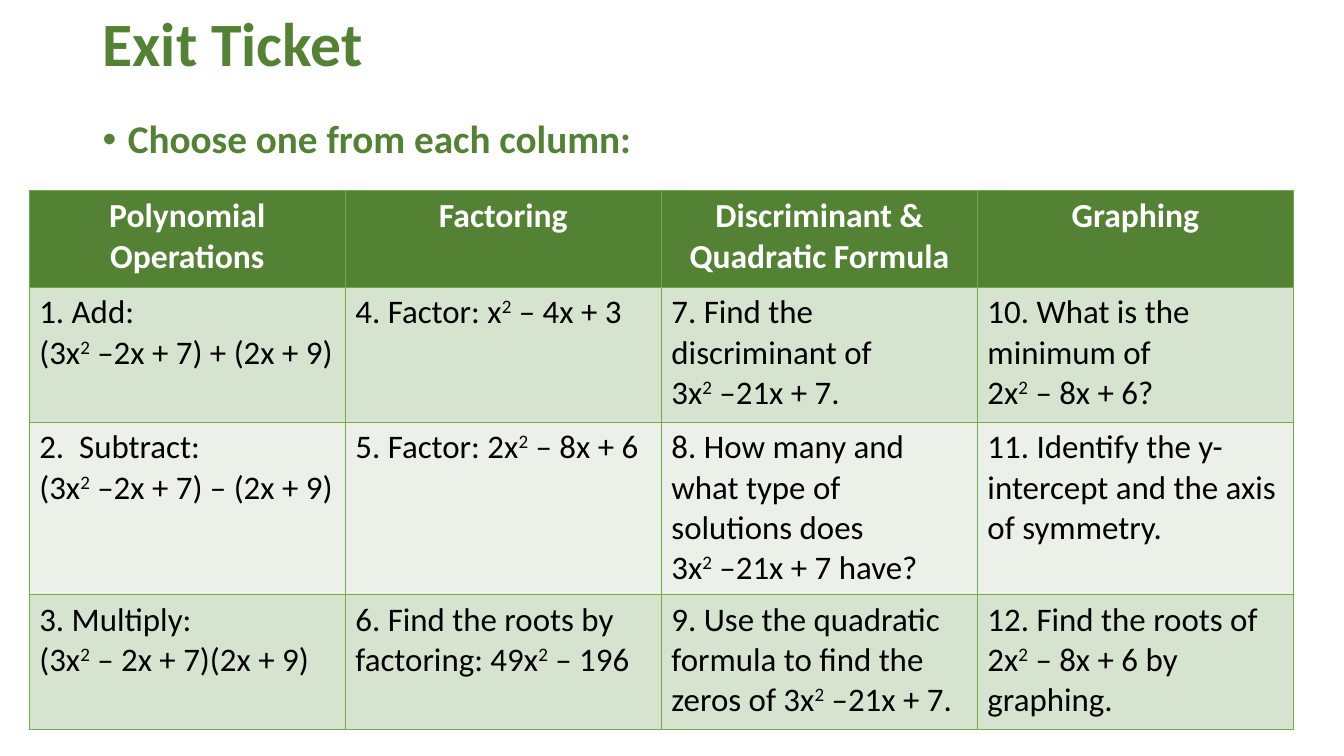
from lxml import etree
from pptx import Presentation
from pptx.dml.color import RGBColor
from pptx.enum import text
from pptx.oxml import ns
from pptx.util import Inches, Pt

FONT = "Calibri"
GREEN, BORDER, WHITE, BLACK = "548235", "70AD47", "FFFFFF", "000000"
BANDS = ["D5E3CF", "EBF1E9"]
ROW_HEIGHTS = [0.96, 1.34, 1.71, 1.34]

HEADERS = ["Polynomial Operations", "Factoring",
           "Discriminant & Quadratic Formula", "Graphing"]
QUESTIONS = [
    ["1. Add: \n(3x² –2x + 7) + (2x + 9)",
     "4. Factor: x² – 4x + 3",
     "7. Find the discriminant of \n3x² –21x + 7.",
     "10. What is the minimum of \n2x² – 8x + 6?"],
    ["2.  Subtract: \n(3x² –2x + 7) – (2x + 9)",
     "5. Factor: 2x² – 8x + 6",
     "8. How many and what type of solutions does \n3x² –21x + 7 have?",
     "11. Identify the y-intercept and the axis of symmetry."],
    ["3. Multiply:\n(3x² – 2x + 7)(2x + 9)",
     "6. Find the roots by factoring: 49x² – 196",
     "9. Use the quadratic formula to find the zeros of 3x² –21x + 7.",
     "12. Find the roots of 2x² – 8x + 6 by graphing."],
]


def rgb(color):
    return RGBColor.from_string(color)


def add_run(p, words, size, color, bold=False):
    r = p.add_run()
    r.text = words
    r.font.name, r.font.size, r.font.bold = FONT, Pt(size), bold
    r.font.color.rgb = rgb(color)
    return r


def add_formula(p, words, size, color):
    """Write text with line breaks and raised squares."""
    for i, line in enumerate(words.split("\n")):
        if i:
            p.add_line_break()
        for j, part in enumerate(line.split("²")):
            if j:
                r = add_run(p, "2", size, color)
                r.font._element.set("baseline", "30000")
            if part:
                add_run(p, part, size, color)


def add_heading(slide, box, words, size, anchor):
    sp = slide.shapes.add_textbox(*map(Inches, box))
    tf = sp.text_frame
    tf.word_wrap = True
    tf.vertical_anchor = anchor
    p = tf.paragraphs[0]
    p.line_spacing = 0.9
    add_run(p, words, size, GREEN, bold=True)
    return p


def add_bullet(p):
    p.space_before = Pt(10)
    pPr = p._p.get_or_add_pPr()
    pPr.set("marL", str(Inches(0.25)))
    pPr.set("indent", str(Inches(-0.25)))
    etree.SubElement(pPr, ns.qn("a:buFont")).set("typeface", "Arial")
    etree.SubElement(pPr, ns.qn("a:buChar")).set("char", "•")


def style_cell(cell, fill):
    # Borders come before the fill in the cell properties
    tcPr = cell._tc.get_or_add_tcPr()
    for side in ("a:lnL", "a:lnR", "a:lnT", "a:lnB"):
        ln = etree.SubElement(tcPr, ns.qn(side), w=str(Pt(1)))
        solid = etree.SubElement(ln, ns.qn("a:solidFill"))
        etree.SubElement(solid, ns.qn("a:srgbClr"), val=BORDER)
    cell.fill.solid()
    cell.fill.fore_color.rgb = rgb(fill)


def add_question_table(slide, box):
    left, top, width, height = map(Inches, box)
    table = slide.shapes.add_table(len(ROW_HEIGHTS), len(HEADERS),
                                   left, top, width, height).table
    for row, row_height in zip(table.rows, ROW_HEIGHTS):
        row.height = Inches(row_height)

    # Header row
    for col, words in enumerate(HEADERS):
        cell = table.cell(0, col)
        style_cell(cell, GREEN)
        p = cell.text_frame.paragraphs[0]
        p.alignment = text.PP_ALIGN.CENTER
        add_run(p, words, 24, WHITE, bold=True)

    # Banded question rows
    for row, questions in enumerate(QUESTIONS):
        for col, words in enumerate(questions):
            cell = table.cell(row + 1, col)
            style_cell(cell, BANDS[row % 2])
            add_formula(cell.text_frame.paragraphs[0], words, 23.5, BLACK)


def build_exit_ticket(prs):
    slide = prs.slides.add_slide(prs.slide_layouts[6])
    add_heading(slide, (0.92, 0, 11.5, 0.92), "Exit Ticket", 44,
                text.MSO_ANCHOR.MIDDLE)
    p = add_heading(slide, (0.92, 1.14, 11.5, 0.62),
                    "Choose one from each column:", 28, text.MSO_ANCHOR.TOP)
    add_bullet(p)
    add_question_table(slide, (0.29, 1.89, 12.54, sum(ROW_HEIGHTS)))


def main():
    prs = Presentation()
    prs.slide_width, prs.slide_height = Inches(13.33), Inches(7.5)
    build_exit_ticket(prs)
    prs.save("out.pptx")


if __name__ == "__main__":
    main()
